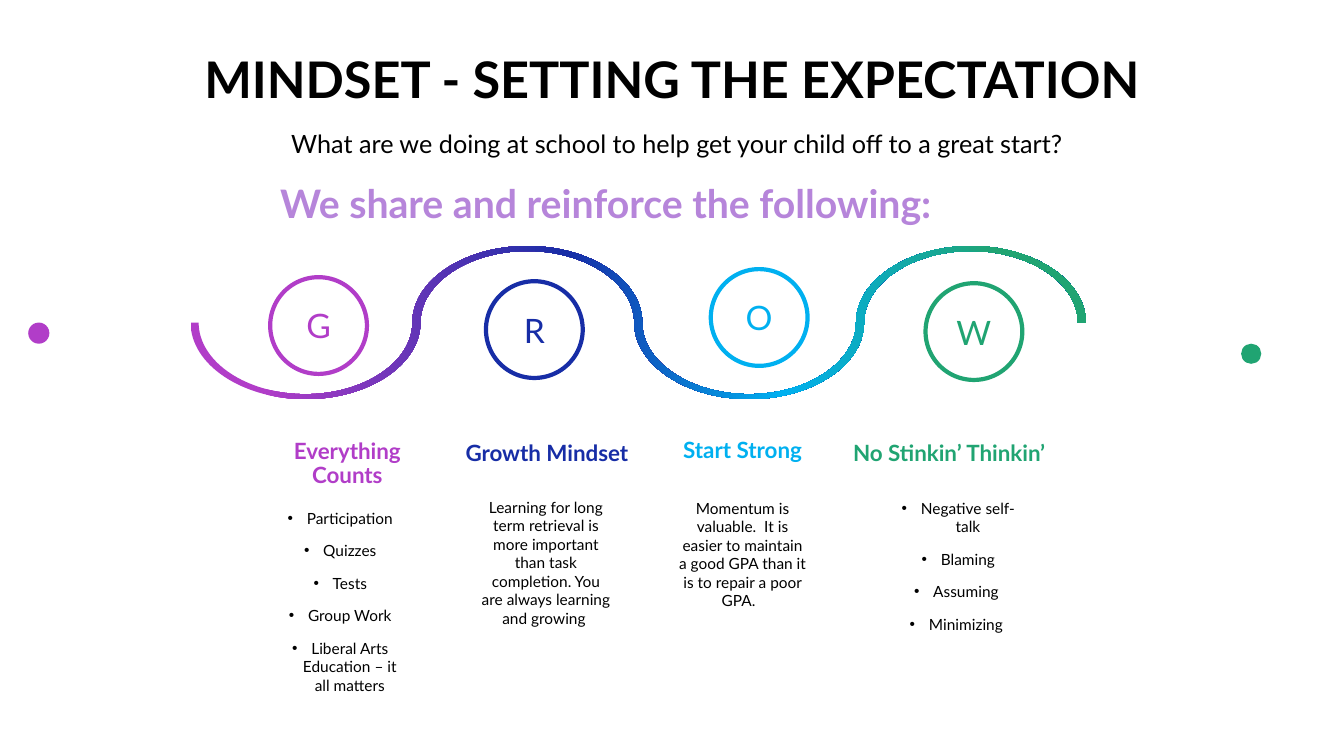
from lxml.etree import SubElement
from pptx import Presentation
from pptx.dml.color import RGBColor
from pptx.enum.shapes import MSO_SHAPE
from pptx.enum.text import MSO_ANCHOR, MSO_AUTO_SIZE, PP_ALIGN
from pptx.oxml.ns import qn
from pptx.util import Pt

PX = 9144
BEND = 0.55
FONT = "Lato"
BLACK = RGBColor(0x00, 0x00, 0x00)
WHITE = RGBColor(0xFF, 0xFF, 0xFF)
PURPLE = RGBColor(0xB1, 0x3D, 0xC8)
NAVY = RGBColor(0x17, 0x2D, 0xA6)
SKY = RGBColor(0x00, 0xB0, 0xF0)
GREEN = RGBColor(0x20, 0xA4, 0x72)
LILAC = RGBColor(0xB6, 0x85, 0xDA)

STOPS = [(8, PURPLE), (42, NAVY), (66, SKY), (90, GREEN)]
STEPS = [
    ("G", PURPLE, (268, 275), "Everything Counts", (280, 432, 129, 33),
     ["Participation", "Quizzes", "Tests", "Group Work",
      "Liberal Arts Education – it all matters"], (273, 500, 129, 203)),
    ("R", NAVY, (482, 279), "Growth Mindset", (452, 434, 181, 33),
     ["Learning for long term retrieval is more important than task "
      "completion. You are always learning and growing "], (477, 489, 129, 193)),
    ("O", SKY, (705, 267), "Start Strong", (672, 431, 129, 33),
     ["Momentum is valuable.  It is easier to maintain a good GPA than "
      "it is to repair a poor GPA.  "], (672, 490, 129, 165)),
    ("W", GREEN, (918, 281), "No Stinkin’ Thinkin’", (831, 434, 221, 33),
     ["Negative self-talk", "Blaming", "Assuming ", "Minimizing "],
     (886, 490, 129, 114)),
]


def emu(*sizes):
    return [round(size * PX) for size in sizes]


def add_run(para, text, size, color, bold=False):
    run = para.add_run()
    run.text = text
    font = run.font
    font.name, font.size, font.bold = FONT, Pt(size), bold
    font.color.rgb = color


def add_bullet(para):
    props = para._p.get_or_add_pPr()
    props.set("marL", str(19 * PX))
    props.set("indent", str(-19 * PX))
    SubElement(props, qn("a:buFont")).set("typeface", "Arial")
    SubElement(props, qn("a:buChar")).set("char", "•")


def add_text(slide, box, lines, size, color, bold=False, center=False, tight=None):
    frame = slide.shapes.add_textbox(*emu(*box)).text_frame
    frame.word_wrap = True
    if center:
        frame.margin_left = frame.margin_right = 0
    for num, line in enumerate(lines):
        para = frame.add_paragraph() if num else frame.paragraphs[0]
        para.alignment = PP_ALIGN.CENTER if center else PP_ALIGN.LEFT
        para.line_spacing = tight
        if num:
            para.space_before = Pt(10)
        if len(lines) > 1:
            add_bullet(para)
        add_run(para, line, size, color, bold)


def add_disc(slide, left, top, side, fill, line=None):
    disc = slide.shapes.add_shape(MSO_SHAPE.OVAL, *emu(left, top, side, side))
    disc.shadow.inherit = False
    disc.fill.solid()
    disc.fill.fore_color.rgb = fill
    if line is None:
        disc.line.fill.background()
    else:
        disc.line.color.rgb = line
        disc.line.width = Pt(3)
    return disc


def add_letter(slide, letter, color, spot):
    frame = add_disc(slide, *spot, 96, WHITE, color).text_frame
    frame.vertical_anchor = MSO_ANCHOR.MIDDLE
    para = frame.paragraphs[0]
    para.alignment = PP_ALIGN.CENTER
    add_run(para, letter, 24, color)


def wave_edge(wide, high, swap):
    points = [(303 - wide, 320)]
    for arc in range(4):
        side = -1 if arc % 2 else 1
        reach, depth = swap if arc % 2 else (wide, high)
        mid = 303 + 220 * arc
        points += [(mid, 320 + side * depth), (mid + reach, 320)]
    return points


def bend_line(line, start, end, upright):
    (x, y), (right, low) = start, end
    wide, high = BEND * (right - x), BEND * (low - y)
    if upright:
        knots = [(x, y + high), (right - wide, low), end]
    else:
        knots = [(x + wide, y), (right, low - high), end]
    line.tag = qn("a:cubicBezTo")
    for point in list(line):
        line.remove(point)
    for left, top in knots:
        point = SubElement(line, qn("a:pt"))
        point.set("x", str(round(left)))
        point.set("y", str(round(top)))


def bend_wave(wave, points):
    left, top = points[0][0], min(y for x, y in points)
    spots = [((x - left) * PX, (y - top) * PX) for x, y in points]
    lines = list(wave._element.spPr.iter(qn("a:lnTo")))
    half = len(points) // 2
    for num, line in enumerate(lines[:len(points) - 1]):
        if num != half - 1:
            bend_line(line, spots[num], spots[num + 1], num % half % 2 == 0)


def add_wave(slide):
    outer, inner = (114, 76), (106, 71)
    points = wave_edge(*outer, inner) + wave_edge(*inner, outer)[::-1]
    spots = [tuple(emu(*point)) for point in points]
    form = slide.shapes.build_freeform(*spots[0], scale=1.0)
    form.add_line_segments(spots[1:], close=True)
    wave = form.convert_to_shape()
    bend_wave(wave, points)
    wave.shadow.inherit = False
    wave.line.fill.background()
    wave.fill.gradient()
    wave.fill.gradient_angle = 0
    stops = wave._element.spPr.find(qn("a:gradFill")).find(qn("a:gsLst"))
    for stop in list(stops):
        stops.remove(stop)
    for place, color in STOPS:
        stop = SubElement(stops, qn("a:gs"))
        stop.set("pos", str(place * 1000))
        SubElement(stop, qn("a:srgbClr")).set("val", str(color))


def add_title(slide, text):
    title = slide.shapes.title
    title.left, title.top, title.width, title.height = emu(25, 50, 1283, 65)
    frame = title.text_frame
    frame.auto_size = MSO_AUTO_SIZE.NONE
    frame.vertical_anchor = MSO_ANCHOR.TOP
    para = frame.paragraphs[0]
    para.alignment = PP_ALIGN.CENTER
    para.line_spacing = 0.9
    add_run(para, text, 36, BLACK, True)


def main():
    deck = Presentation()
    deck.slide_width, deck.slide_height = emu(1333, 750)
    slide = deck.slides.add_slide(deck.slide_layouts[5])
    add_title(slide, "MINDSET - SETTING THE EXPECTATION")
    add_text(slide, (273, 122, 824, 40),
             [" What are we doing at school to help get your child off to a great start?"],
             18, BLACK)
    add_text(slide, (268, 173, 898, 57),
             ["We share and reinforce the following:"], 28, LILAC, True)
    add_wave(slide)
    add_disc(slide, 28, 320, 21, PURPLE)
    add_disc(slide, 1231, 341, 20, GREEN)
    for letter, color, spot, head, top, lines, low in STEPS:
        add_letter(slide, letter, color, spot)
        add_text(slide, top, [head], 16, color, True, True, 0.9)
        add_text(slide, low, lines, 11, BLACK, center=True)
    deck.save("out.pptx")


if __name__ == "__main__":
    main()
